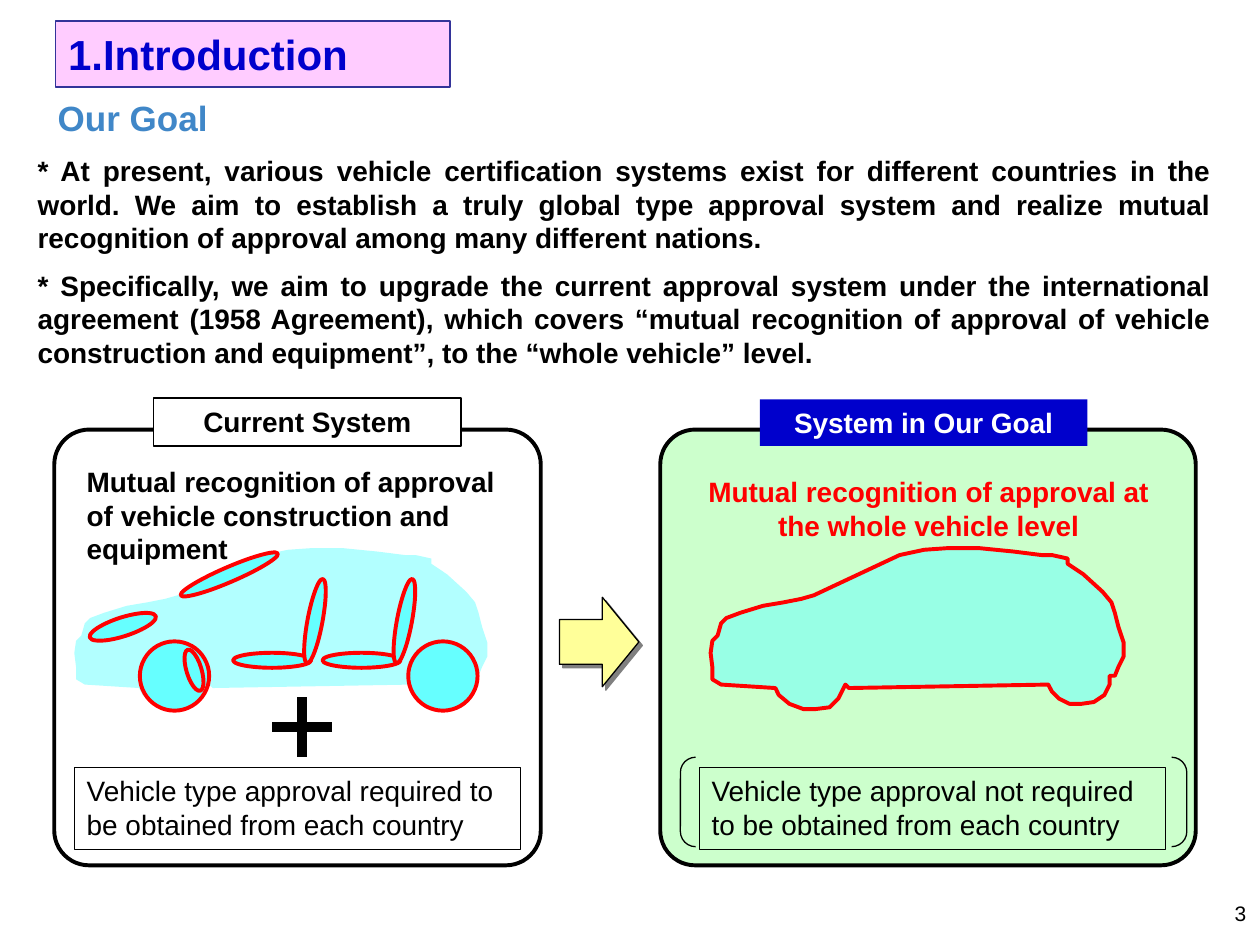
"""Build the introduction slide comparing the current and target approval systems."""
from dataclasses import dataclass

from lxml.etree import SubElement
from pptx import Presentation
from pptx.dml.color import RGBColor
from pptx.enum.shapes import MSO_CONNECTOR as Connector, MSO_SHAPE as Preset
from pptx.enum.text import MSO_ANCHOR as Anchor, MSO_AUTO_SIZE as AutoSize, PP_ALIGN as Align
from pptx.oxml.ns import qn
from pptx.util import Pt


@dataclass(frozen=True)
class Theme:
    font: str = "Arial"
    black: str = "000000"
    white: str = "FFFFFF"
    red: str = "FF0000"
    navy: str = "0000CC"
    sky: str = "4087C8"
    indigo: str = "333399"
    pink: str = "FFCCFF"
    green: str = "CCFFCC"
    yellow: str = "FFFF99"
    aqua: str = "66FFFF"
    grey: str = "808080"
    title: int = 24
    subtitle: int = 20
    body: int = 16
    number: int = 12
    thin: float = 0.75
    thick: float = 2.25
    plus: float = 6


THEME = Theme()
STYLES = {
    "title": (dict(size=Pt(THEME.title), bold=True), THEME.navy, Align.LEFT),
    "subtitle": (dict(size=Pt(THEME.subtitle), bold=True), THEME.sky, Align.LEFT),
    "body": (dict(size=Pt(THEME.body), bold=True), THEME.black, Align.JUSTIFY),
    "heading": (dict(size=Pt(THEME.body), bold=True), THEME.black, Align.LEFT),
    "goal heading": (dict(size=Pt(THEME.body), bold=True), THEME.red, Align.CENTER),
    "label": (dict(size=Pt(THEME.body), bold=True), THEME.black, Align.CENTER),
    "goal label": (dict(size=Pt(THEME.body), bold=True), THEME.white, Align.CENTER),
    "note": (dict(size=Pt(THEME.body), bold=False), THEME.black, Align.LEFT),
    "number": (dict(size=Pt(THEME.number), bold=False), THEME.black, Align.RIGHT),
}
TITLE = ("1.Introduction", (31.7, 12.2, 225.4, 37.4))
TEXTS = [
    (["3"], "number", (551.5, 511.2, 167.8, 29.5)),
    (["Our Goal"], "subtitle", (25.9, 51.8, 129.6, 31.7)),
    (["* At present, various vehicle certification systems exist for different countries in the "
      "world. We aim to establish a truly global type approval system and realize mutual "
      "recognition of approval among many different nations.",
      "* Specifically, we aim to upgrade the current approval system under the international "
      "agreement (1958 Agreement), which covers “mutual recognition of approval of vehicle "
      "construction and equipment”, to the “whole vehicle” level."],
     "body", (14.4, 84.2, 684.7, 136.8)),
]
PANELS = [
    dict(frame=(31, 245.5, 278, 249), fill=THEME.white, car=(42.5, 313.2), car_line=None,
         heading=("Mutual recognition of approval of vehicle construction and equipment",
                  "heading", (42.5, 262.1, 254.9, 64.8)),
         note=("Vehicle type approval required to be obtained from each country",
               "note", (42.5, 438.5, 254.9, 46.8)),
         label=("Current System", "label", (87.8, 227.5, 175.7, 27.4)),
         label_fill=THEME.white, label_line=THEME.black, has_parts=True, bracket=None),
    dict(frame=(377.3, 245.5, 306, 249), fill=THEME.green, car=(406.1, 313.2), car_line=THEME.red,
         heading=("Mutual recognition of approval at the whole vehicle level",
                  "goal heading", (388.8, 267.8, 283.7, 46.1)),
         note=("Vehicle type approval not required to be obtained from each country",
               "note", (399.6, 438.5, 266.4, 46.8)),
         label=("System in Our Goal", "goal label", (434.2, 228.2, 187.2, 26.6)),
         label_fill=THEME.navy, label_line=None, has_parts=False,
         bracket=(388.8, 432.7, 289.4, 51.1)),
]
CAR_OUTLINE = [
    (1, 53), (0, 60), (1, 68), (1, 75), (6, 78), (37, 80), (39, 84), (45, 89), (53, 92),
    (60, 92), (68, 91), (73, 86), (77, 78), (79, 80), (193, 78), (195, 82), (199, 86),
    (205, 89), (212, 89), (219, 88), (225, 84), (228, 78), (228, 73), (231, 73), (233, 68),
    (236, 62), (236, 54), (233, 45), (231, 37), (229, 31), (224, 25), (213, 15), (204, 9),
    (204, 6), (195, 4), (189, 4), (173, 2), (153, 0), (136, 0), (122, 1), (108, 4),
    (59, 27), (52, 29), (42, 31), (30, 33), (17, 37), (9, 40), (6, 43), (4, 50),
]
SEAT_GAP = 51.1
WHEELS = [(left, 366.5, 39.6, 39.6, 0) for left in (79.9, 233.3)]
SEATS = [part for shift in (SEAT_GAP, 0) for part in (
    (133.2 + shift, 373, 44.6, 8.6, 0), (155.5 + shift, 350.6, 49, 8.6, 280.6))]
WINDSCREEN, LAMP, STEERING = (
    (100.8, 324, 60.5, 8.6, 336.7), (50.4, 352.8, 39.6, 10.8, 342.2), (98.6, 378.7, 24.5, 8.6, 73.1))
PLUS_CENTRE, PLUS_ARM = (172.6, 415.4), 17.1
ARROW = (319.7, 341.3, 45.4, 51.1)


def points(values):
    return [Pt(value) for value in values]


def paint(shape, fill=None, line=None, width=THEME.thin):
    if fill:
        shape.fill.solid()
        shape.fill.fore_color.rgb = RGBColor.from_string(fill)
    else:
        shape.fill.background()
    if line:
        shape.line.color.rgb = RGBColor.from_string(line)
        shape.line.width = Pt(width)
    else:
        shape.line.fill.background()


def write(shape, paragraphs, style, anchor=Anchor.TOP):
    font_values, color, alignment = STYLES[style]
    frame = shape.text_frame
    frame_values = dict(text="\n".join(paragraphs), word_wrap=True,
                        auto_size=AutoSize.NONE, vertical_anchor=anchor)
    for name, value in frame_values.items():
        setattr(frame, name, value)
    for index, paragraph in enumerate(frame.paragraphs):
        paragraph.alignment = alignment
        paragraph.space_before = Pt(8 if index else 0)
        font = paragraph.runs[0].font
        for name, value in dict(font_values, name=THEME.font).items():
            setattr(font, name, value)
        font.color.rgb = RGBColor.from_string(color)


def add_text(shapes, paragraphs, style, box):
    write(shapes.add_textbox(*points(box)), paragraphs, style)


def add_preset(shapes, preset, box, adjustments=(), **colors):
    shape = shapes.add_shape(preset, *points(box))
    shape.shadow.inherit = False
    for index, value in enumerate(adjustments):
        shape.adjustments[index] = value
    paint(shape, **colors)
    return shape


def add_car(shapes, origin, line):
    builder = shapes.build_freeform(*CAR_OUTLINE[0], scale=Pt(1))
    builder.add_line_segments(CAR_OUTLINE[1:], close=True)
    car = builder.convert_to_shape(*points(origin))
    car.shadow.inherit = False
    paint(car, THEME.aqua, line, THEME.thick)
    color = car._element.spPr.find(qn("a:solidFill"))[0]
    SubElement(color, qn("a:alpha"), val="50000")


def add_parts(shapes):
    for *box, rotation in WHEELS + SEATS + [WINDSCREEN, LAMP, STEERING]:
        part = add_preset(shapes, Preset.OVAL, box, fill=THEME.aqua, line=THEME.red, width=THEME.thick)
        part.rotation = rotation
    x, y = PLUS_CENTRE
    for across, down in ((PLUS_ARM, 0), (0, PLUS_ARM)):
        ends = points((x - across, y - down, x + across, y + down))
        bar = shapes.add_connector(Connector.STRAIGHT, *ends)
        bar.line.color.rgb = RGBColor.from_string(THEME.black)
        bar.line.width = Pt(THEME.plus)
        SubElement(bar._element.spPr, qn("a:effectLst"))


def add_panel(shapes, panel):
    add_preset(shapes, Preset.ROUNDED_RECTANGLE, panel["frame"], [0.08],
               fill=panel["fill"], line=THEME.black, width=THEME.thick)
    text, style, box = panel["heading"]
    add_text(shapes, [text], style, box)
    add_car(shapes, panel["car"], panel["car_line"])
    if panel["has_parts"]:
        add_parts(shapes)
    boxes = ((panel["note"], None, THEME.black),
             (panel["label"], panel["label_fill"], panel["label_line"]))
    for (text, style, box), fill, line in boxes:
        write(add_preset(shapes, Preset.RECTANGLE, box, fill=fill, line=line), [text], style)
    if panel["bracket"]:
        add_preset(shapes, Preset.DOUBLE_BRACKET, panel["bracket"], [0.17], line=THEME.black)


def add_arrow(shapes):
    arrow = add_preset(shapes, Preset.RIGHT_ARROW, ARROW, [0.5, 0.46], fill=THEME.yellow, line=THEME.black)
    effects = arrow._element.spPr.find(qn("a:effectLst"))
    shadow = SubElement(effects, qn("a:outerShdw"), dist=str(Pt(2.8)), dir="2700000",
                        algn="ctr", rotWithShape="0")
    SubElement(shadow, qn("a:srgbClr"), val=THEME.grey)


def main():
    presentation = Presentation()
    presentation.slide_width, presentation.slide_height = Pt(720), Pt(540)
    slide = presentation.slides.add_slide(presentation.slide_layouts[5])
    title = slide.shapes.title
    text, box = TITLE
    for name, value in zip(("left", "top", "width", "height"), points(box)):
        setattr(title, name, value)
    paint(title, THEME.pink, THEME.indigo, 1)
    write(title, [text], "title", Anchor.MIDDLE)
    for paragraphs, style, box in TEXTS:
        add_text(slide.shapes, paragraphs, style, box)
    add_arrow(slide.shapes)
    for panel in PANELS:
        add_panel(slide.shapes.add_group_shape().shapes, panel)
    presentation.save("out.pptx")


if __name__ == "__main__":
    main()
